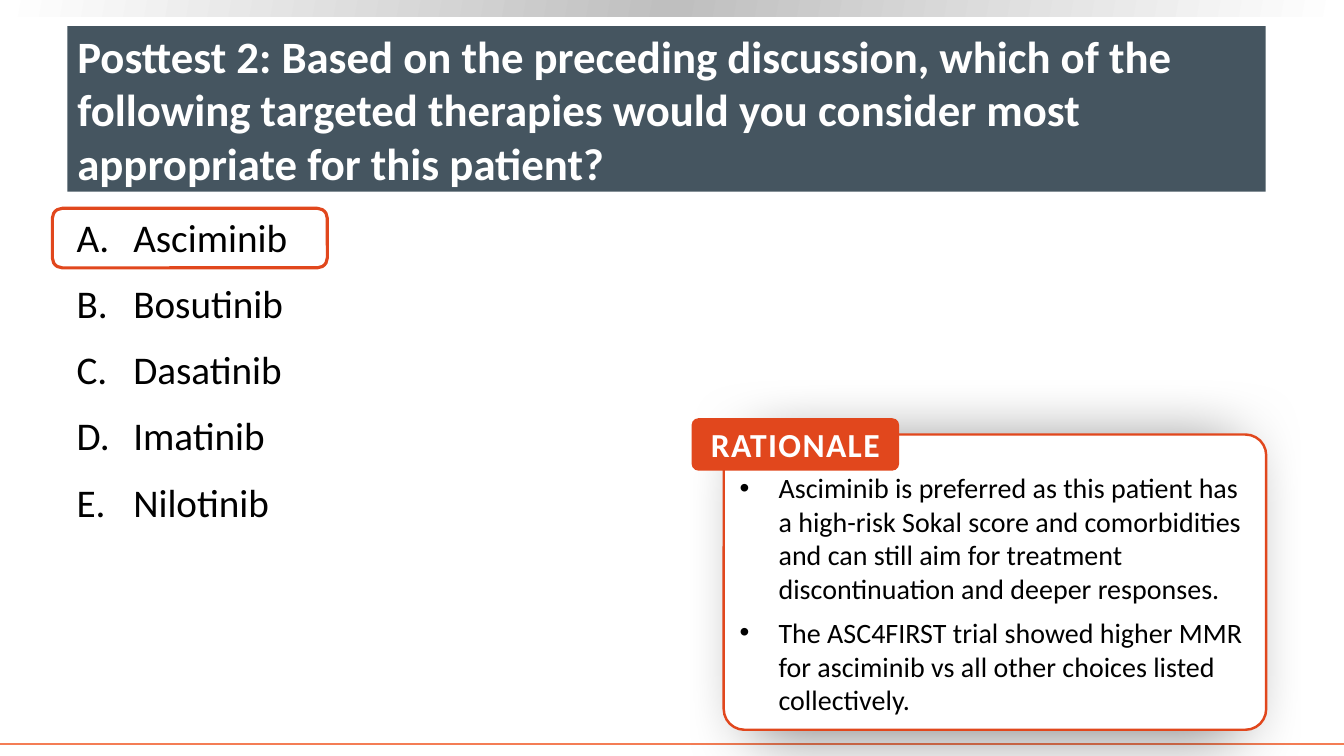
from pptx import Presentation
from pptx.dml.color import RGBColor
from pptx.enum import shapes, text
from pptx.oxml import parse_xml
from pptx.oxml.ns import nsdecls
from pptx.util import Cm, Pt

COLORS = {"slate": "455560", "orange": "E1471D", "rule": "F47D55",
          "silver": "BFBFBF", "white": "FFFFFF", "black": "000000"}
FONT = "Calibri"
WIDTH, HEIGHT = 33.87, 19.05
QUESTION = ("Posttest 2: Based on the preceding discussion, which of the following "
            "targeted therapies would you consider most appropriate for this patient?")
CHOICES = ["Asciminib", "Bosutinib", "Dasatinib", "Imatinib", "Nilotinib"]
RATIONALE = [
    "Asciminib is preferred as this patient has a high-risk Sokal score and "
    "comorbidities and can still aim for treatment discontinuation and deeper responses.",
    "The ASC4FIRST trial showed higher MMR for asciminib vs all other choices "
    "listed collectively."]
ROUND = shapes.MSO_SHAPE.ROUNDED_RECTANGLE
RECT = shapes.MSO_SHAPE.RECTANGLE


def rgb(name):
    return RGBColor.from_string(COLORS[name])


def xml(tag, attrs="", inner=""):
    return parse_xml(f"<a:{tag} {nsdecls('a')} {attrs}>{inner}</a:{tag}>")


def add_box(s, kind, box, fill=None, line=None, weight=1.0, radius=None):
    sp = s.shapes.add_shape(kind, *map(Cm, box))
    sp.shadow.inherit = False
    if fill:
        sp.fill.solid()
        sp.fill.fore_color.rgb = rgb(fill)
    else:
        sp.fill.background()
    if line:
        sp.line.color.rgb = rgb(line)
        sp.line.width = Pt(weight)
    else:
        sp.line.fill.background()
    if radius is not None:
        sp.adjustments[0] = radius
    return sp


def write(sp, lines, size, color, bold=False, align=text.PP_ALIGN.LEFT,
          anchor=text.MSO_ANCHOR.TOP, margins=(0.25, 0.13, 0.25, 0.13)):
    tf = sp.text_frame
    tf.word_wrap = True
    tf.vertical_anchor = anchor
    tf.margin_left, tf.margin_top, tf.margin_right, tf.margin_bottom = map(Cm, margins)
    tf.text = "\n".join(lines)
    for p in tf.paragraphs:
        p.alignment = align
        for r in p.runs:
            r.font.name, r.font.size, r.font.bold = FONT, Pt(size), bold
            r.font.color.rgb = rgb(color)
    return tf


def add_markers(tf, indent, before, after, tag, attrs, spacing=1.0):
    for p in tf.paragraphs:
        p.space_before, p.space_after = Pt(before), Pt(after)
        p.line_spacing = spacing
        pPr = p._p.get_or_add_pPr()
        pPr.set("marL", str(Cm(indent)))
        pPr.set("indent", str(-Cm(indent)))
        pPr.append(xml("buClr", inner=f'<a:srgbClr val="{COLORS["black"]}"/>'))
        pPr.append(xml("buFont", 'typeface="Arial"' if tag == "buChar" else f'typeface="{FONT}"'))
        pPr.append(xml(tag, attrs))


def add_frame(s, box):
    x, y, w, h = box
    # Silver band along the top edge
    band = add_box(s, RECT, (x, y, w, 0.41), "silver")
    stops = "".join(f'<a:gs pos="{pos}"><a:srgbClr val="{COLORS[c]}"/></a:gs>'
                    for pos, c in ((0, "white"), (50000, "silver"), (100000, "white")))
    solid = band.fill._xPr.solidFill if hasattr(band.fill._xPr, "solidFill") else band.fill._xPr.eg_fillProperties
    solid.getparent().replace(solid, xml(
        "gradFill", 'rotWithShape="1"', f'<a:gsLst>{stops}</a:gsLst><a:lin ang="11400000" scaled="0"/>'))
    # Orange rule near the bottom edge
    rule_y = Cm(y + h - 0.3)
    rule = s.shapes.add_connector(shapes.MSO_CONNECTOR.STRAIGHT, Cm(x), rule_y, Cm(x + w), rule_y)
    rule.line.color.rgb = rgb("rule")
    rule.line.width = Pt(1.5)
    rule._element.spPr.append(xml("effectLst"))


def add_question(s, box):
    sp = add_box(s, RECT, box, "slate")
    write(sp, [QUESTION], 32, "white", bold=True, anchor=text.MSO_ANCHOR.MIDDLE)


def add_choices(s, box):
    x, y, w, h = box
    sp = s.shapes.add_textbox(*map(Cm, box))
    tf = write(sp, CHOICES, 28, "black")
    add_markers(tf, 1.43, 10, 7, "buAutoNum", 'type="alphaUcPeriod"', 0.9)
    # Outline around the correct answer
    add_box(s, ROUND, (x - 0.36, y - 0.13, 6.93, 1.5), line="orange", weight=2.25)


def add_rationale(s, box):
    x, y, w, h = box
    # Panel with soft shadow
    panel = add_box(s, ROUND, box, "white", "orange", 1.75, 0.07)
    tf = write(panel, RATIONALE, 20, "black", margins=(0.25, 0.76, 0.25, 0.13))
    add_markers(tf, 0.98, 2.4, 5, "buChar", 'char="•"')
    panel._element.spPr[-1].append(xml(
        "outerShdw", f'blurRad="{Pt(46.9)}" dist="{Pt(4)}" dir="5400000" sx="90000" sy="98000" '
        'algn="ctr" rotWithShape="0"',
        f'<a:srgbClr val="{COLORS["black"]}"><a:alpha val="50000"/></a:srgbClr>'))
    # Heading tab
    tab = add_box(s, ROUND, (x - 0.81, y - 0.41, 5.23, 1.32), "orange", radius=0.13)
    tf = write(tab, ["RATIONALE"], 24, "white", bold=True, align=text.PP_ALIGN.CENTER,
               anchor=text.MSO_ANCHOR.MIDDLE, margins=(0, 0, 0, 0))
    tf.paragraphs[0].runs[0].font._element.set("spc", "100")


def main():
    prs = Presentation()
    prs.slide_width, prs.slide_height = Cm(WIDTH), Cm(HEIGHT)
    s = prs.slides.add_slide(prs.slide_layouts[6])
    add_frame(s, (0, 0, WIDTH, HEIGHT))
    add_question(s, (1.7, 0.66, 30.2, 4.17))
    add_choices(s, (1.68, 5.38, 30.23, 11.84))
    add_rationale(s, (18.24, 10.95, 13.67, 7.44))
    prs.save("out.pptx")


if __name__ == "__main__":
    main()
